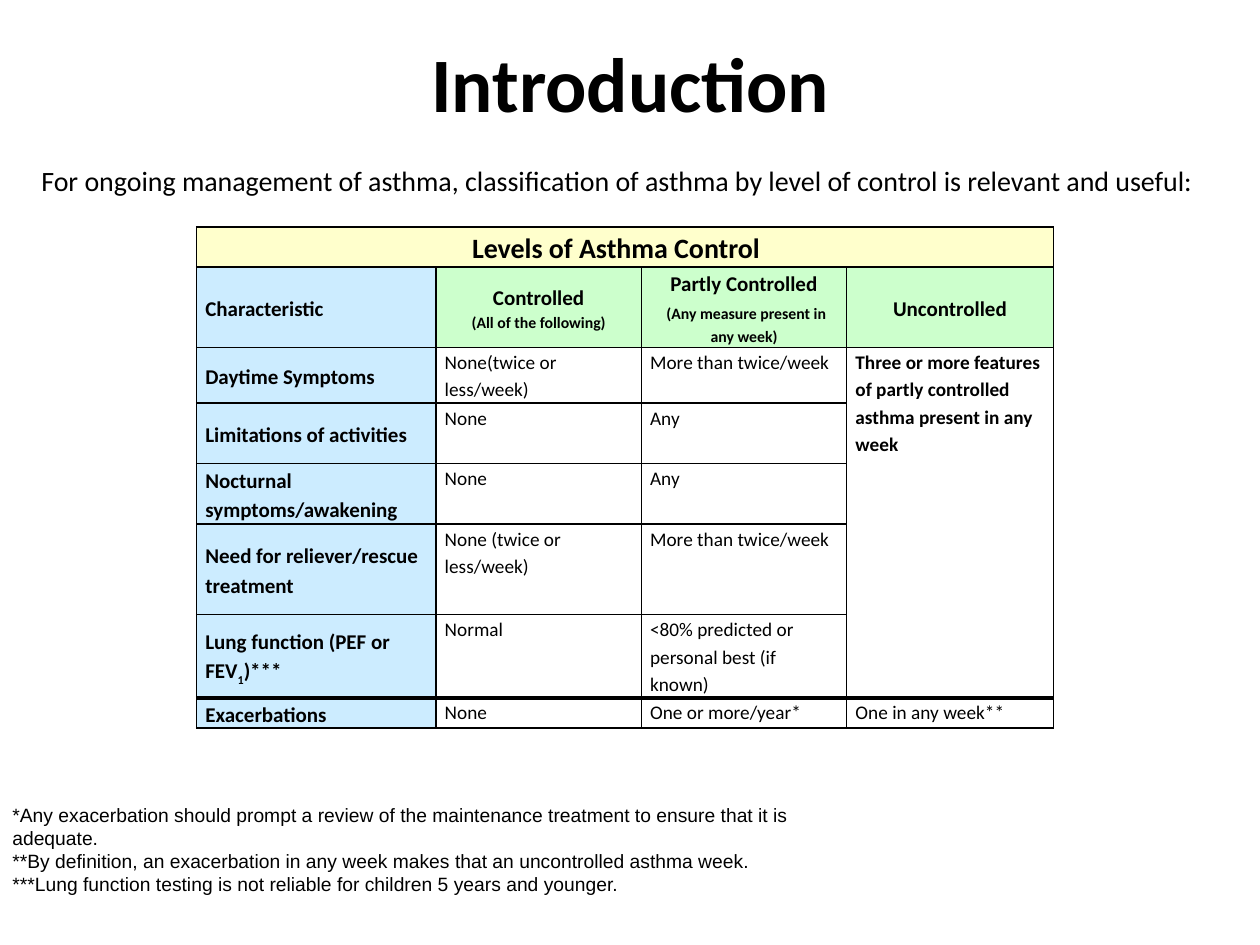
"""Builds a slide that classifies asthma by level of control."""
import dataclasses

import pptx
import pptx.dml.color
import pptx.enum.text
import pptx.oxml.ns
import pptx.util
from lxml import etree

ALIGN = pptx.enum.text.PP_ALIGN
ANCHOR = pptx.enum.text.MSO_ANCHOR


@dataclasses.dataclass(frozen=True)
class Theme:
    ink: str = "000000"
    banner: str = "FFFFCC"
    label: str = "CCECFF"
    level: str = "CCFFCC"
    body_font: str = "Calibri"
    note_font: str = "Arial"
    title: int = 44
    lead: int = 16
    heading: int = 12
    body: int = 11
    detail: int = 9
    rule: int = 1
    heavy_rule: int = 3
    table_spacing: float = 1.15


@dataclasses.dataclass(frozen=True)
class Span:
    text: str
    size: int
    bold: bool = False
    font: str = Theme.body_font
    subscript: bool = False


class SlideBuilder:
    COLUMNS, ROWS = 100, 75

    def __init__(self, deck, theme):
        self.theme = theme
        self.column = deck.slide_width / self.COLUMNS
        self.row = deck.slide_height / self.ROWS
        self.slide = deck.slides.add_slide(deck.slide_layouts[5])

    def across(self, columns):
        return pptx.util.Emu(round(columns * self.column))

    def down(self, rows):
        return pptx.util.Emu(round(rows * self.row))

    def box(self, left, top, width, height):
        return self.across(left), self.down(top), self.across(width), self.down(height)

    def add_spans(self, frame, paragraphs, align=ALIGN.LEFT, spacing=None):
        for index, spans in enumerate(paragraphs):
            paragraph = frame.add_paragraph() if index else frame.paragraphs[0]
            paragraph.alignment = align
            paragraph.line_spacing = spacing
            for span in spans:
                run = paragraph.add_run()
                run.text = span.text
                run.font.name = span.font
                run.font.size = pptx.util.Pt(span.size)
                run.font.bold = span.bold
                run.font.color.rgb = pptx.dml.color.RGBColor.from_string(self.theme.ink)
                if span.subscript:
                    run.font._element.set("baseline", "-25000")

    def title(self, place, text):
        heading = self.slide.shapes.title
        heading.left, heading.top, heading.width, heading.height = self.box(*place)
        heading.text_frame.vertical_anchor = ANCHOR.TOP
        self.add_spans(heading.text_frame, [[Span(text, self.theme.title, True)]], ALIGN.CENTER)

    def text(self, place, paragraphs, right_inset=1):
        frame = self.slide.shapes.add_textbox(*self.box(*place)).text_frame
        frame.word_wrap = True
        frame.vertical_anchor = ANCHOR.MIDDLE
        frame.margin_right = self.across(right_inset)
        self.add_spans(frame, paragraphs)

    def border(self, cell, side, weight):
        properties = cell._tc.get_or_add_tcPr()
        line = etree.SubElement(properties, pptx.oxml.ns.qn(f"a:ln{side}"),
                                w=str(pptx.util.Pt(weight)))
        solid = etree.SubElement(line, pptx.oxml.ns.qn("a:solidFill"))
        etree.SubElement(solid, pptx.oxml.ns.qn("a:srgbClr"), val=self.theme.ink)

    def table(self, place, widths, heights, merges):
        grid = self.slide.shapes.add_table(len(heights), len(widths), *self.box(*place)).table
        grid.first_row = grid.horz_banding = False
        for column, width in zip(grid.columns, widths):
            column.width = self.across(width)
        for row, height in zip(grid.rows, heights):
            row.height = self.down(height)
        for first, last in merges:
            grid.cell(*first).merge(grid.cell(*last))
        return grid

    def cell(self, cell, paragraphs, fill, centred, middle, heavy_top, heavy_bottom):
        theme = self.theme
        for side, heavy in zip("LRTB", (False, False, heavy_top, heavy_bottom)):
            self.border(cell, side, theme.heavy_rule if heavy else theme.rule)
        if fill:
            cell.fill.solid()
            cell.fill.fore_color.rgb = pptx.dml.color.RGBColor.from_string(fill)
        else:
            cell.fill.background()
        cell.margin_left = cell.margin_right = self.across(0.7)
        cell.margin_top = cell.margin_bottom = 0
        cell.vertical_anchor = ANCHOR.MIDDLE if middle else ANCHOR.TOP
        self.add_spans(cell.text_frame, paragraphs, ALIGN.CENTER if centred else ALIGN.LEFT,
                       theme.table_spacing)


def control_levels(theme):
    def strong(text, size=theme.heading, **options):
        return Span(text, size, True, **options)

    def plain(text):
        return [[Span(text, theme.body)]]

    def label(text):
        return [[strong(text)]]

    lung_function = [[strong("Lung function (PEF or FEV"), strong("1", subscript=True),
                      strong(")***")]]
    uncontrolled = [[strong("Three or more features of partly controlled asthma present in any week",
                            theme.body)]]
    return [
        [[[strong("Levels of Asthma Control", theme.lead)]], [], [], []],
        [label("Characteristic"),
         [[strong("Controlled")], [strong("(All of the following)", theme.detail)]],
         [[strong("Partly Controlled")],
          [strong(" ", theme.body), strong("(Any measure present in any week)", theme.detail)]],
         label("Uncontrolled")],
        [label("Daytime Symptoms"), plain("None(twice or less/week)"),
         plain("More than twice/week"), uncontrolled],
        [label("Limitations of activities"), plain("None"), plain("Any"), []],
        [label("Nocturnal symptoms/awakening"), plain("None"), plain("Any"), []],
        [label("Need for reliever/rescue treatment"), plain("None (twice or less/week)"),
         plain("More than twice/week"), []],
        [lung_function, plain("Normal"), plain("<80% predicted or personal best (if known)"), []],
        [label("Exacerbations"), plain("None"), plain("One or more/year*"),
         plain("One in any week**")],
    ]


def add_levels_table(builder):
    theme = builder.theme
    levels = control_levels(theme)
    last = len(levels) - 1
    grid = builder.table((15.6, 18, 68, 39.8), (19, 16.3, 16.3, 16.4),
                         (3.2, 6.4, 4.4, 4.8, 4.8, 7.2, 6.6, 2.4),
                         [((0, 0), (0, 3)), ((2, 3), (last - 1, 3))])
    for row, level in enumerate(levels):
        for column, paragraphs in enumerate(level):
            cell = grid.cell(row, column)
            if row == 0:
                fill = theme.banner
            elif column == 0:
                fill = theme.label
            else:
                fill = theme.level if row == 1 else None
            bottom_row = row + (cell.span_height if cell.is_merge_origin else 1)
            builder.cell(cell, paragraphs, fill,
                         centred=row == 0 or (row == 1 and column > 0),
                         middle=row == 1 or (row > 1 and column == 0),
                         heavy_top=row == last, heavy_bottom=bottom_row == last)
    grid.cell(0, 0).margin_right = builder.across(2.1)


def main():
    deck = pptx.Presentation()
    deck.slide_width, deck.slide_height = pptx.util.Inches(10), pptx.util.Inches(7.5)
    theme = Theme()
    builder = SlideBuilder(deck, theme)
    builder.title((5.5, 2.3, 89.1, 8.4), "Introduction")
    builder.text((2.3, 12.5, 94.5, 3.7), [[Span(
        "For ongoing management of asthma, classification of asthma by level of control "
        "is relevant and useful:", theme.lead)]])
    add_levels_table(builder)
    footnotes = (
        "*Any exacerbation should prompt a review of the maintenance treatment to ensure "
        "that it is adequate.",
        "**By definition, an exacerbation in any week makes that an uncontrolled asthma week.",
        "***Lung function testing is not reliable for children 5 years and younger.",
    )
    builder.text((0, 64.1, 70.7, 6.6),
                 [[Span(note, theme.body, font=theme.note_font)] for note in footnotes],
                 right_inset=5)
    deck.save("out.pptx")


if __name__ == "__main__":
    main()
